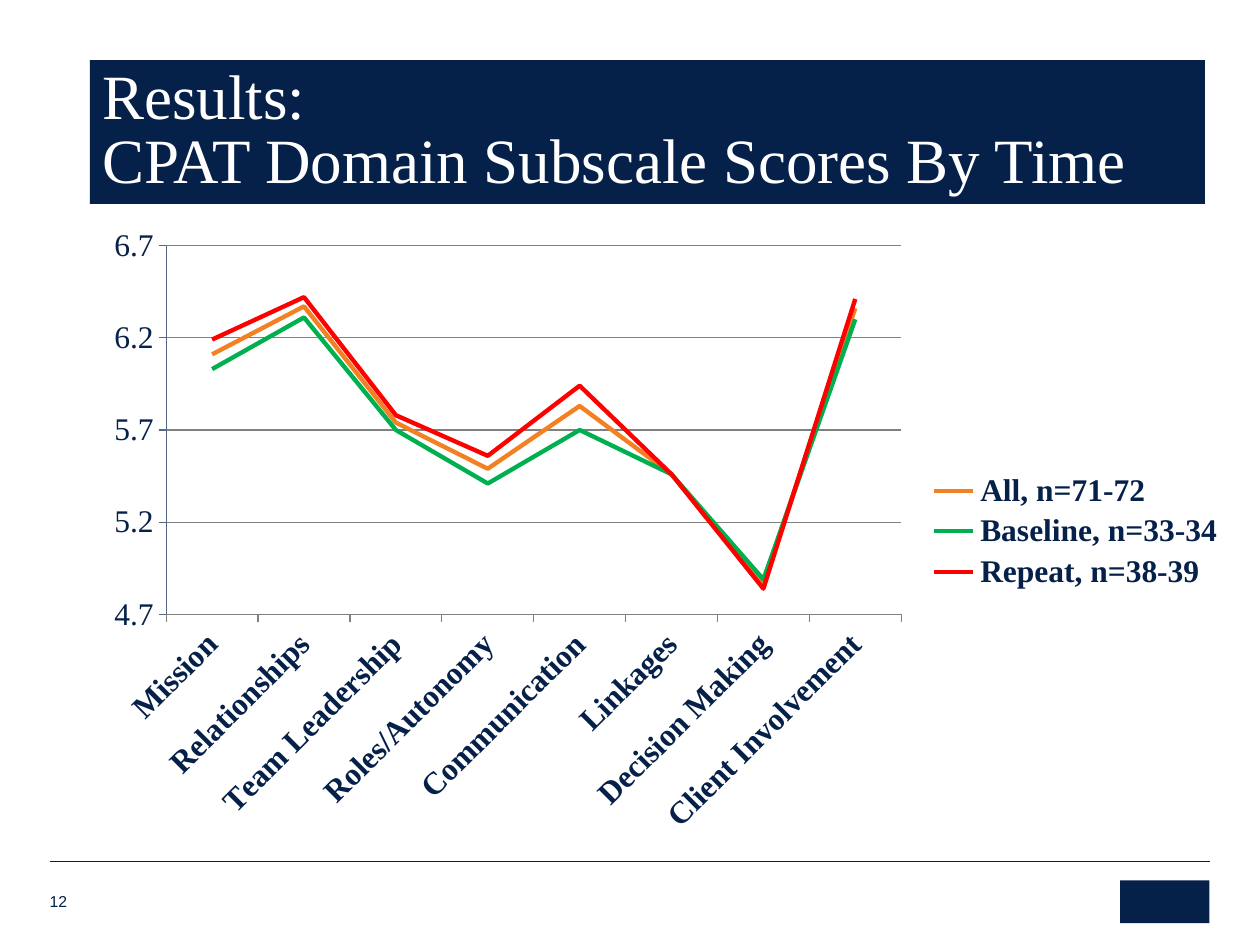
from lxml import etree
from pptx import Presentation
from pptx.chart.data import CategoryChartData
from pptx.dml.color import RGBColor
from pptx.enum.chart import XL_CHART_TYPE, XL_LEGEND_POSITION, XL_TICK_MARK
from pptx.enum.shapes import MSO_CONNECTOR, MSO_SHAPE
from pptx.enum.text import MSO_ANCHOR, MSO_AUTO_SIZE, PP_ALIGN
from pptx.oxml.ns import qn
from pptx.util import Cm, Pt

LINE_CHART = XL_CHART_TYPE.LINE
LEGEND_RIGHT = XL_LEGEND_POSITION.RIGHT
TICK_OUTSIDE = XL_TICK_MARK.OUTSIDE
STRAIGHT = MSO_CONNECTOR.STRAIGHT
RECTANGLE = MSO_SHAPE.RECTANGLE
MIDDLE, BOTTOM = MSO_ANCHOR.MIDDLE, MSO_ANCHOR.BOTTOM
NO_AUTOFIT = MSO_AUTO_SIZE.NONE
LEFT = PP_ALIGN.LEFT

NAVY, WHITE, GRID_GRAY, AXIS_BLUE = "052049", "FFFFFF", "808080", "556784"
SERIF, SANS = "Times New Roman", "Arial"
TITLE_ONLY_LAYOUT = 5
CHART_WIDTH, CHART_HEIGHT = 23.11, 12.7

TITLE_LINES = ["Results:", "CPAT Domain Subscale Scores By Time"]
DOMAINS = ["Mission", "Relationships", "Team Leadership", "Roles/Autonomy",
           "Communication", "Linkages", "Decision Making", "Client Involvement"]
SCORES = [
    ("All, n=71-72", "F48024", [6.11, 6.37, 5.74, 5.49, 5.83, 5.46, 4.87, 6.36]),
    ("Baseline, n=33-34", "00B050", [6.03, 6.31, 5.7, 5.41, 5.7, 5.46, 4.89, 6.3]),
    ("Repeat, n=38-39", "FF0000", [6.19, 6.42, 5.78, 5.56, 5.94, 5.46, 4.84, 6.41]),
]


def rgb(color):
    return RGBColor.from_string(color)


def style_font(font, name, size, color, bold=False):
    font.name, font.size, font.bold = name, Pt(size), bold
    font.color.rgb = rgb(color)


def style_line(line, color, width):
    line.color.rgb = rgb(color)
    line.width = Pt(width)


def fill_solid(shape, color):
    shape.fill.solid()
    shape.fill.fore_color.rgb = rgb(color)


def place(shape, left, top, width, height):
    shape.left, shape.top = Cm(left), Cm(top)
    shape.width, shape.height = Cm(width), Cm(height)


def add_title(slide):
    title = slide.shapes.title
    place(title, 1.81, 1.21, 22.48, 2.9)
    fill_solid(title, NAVY)
    frame = title.text_frame
    frame.auto_size, frame.vertical_anchor = NO_AUTOFIT, MIDDLE
    paragraph = frame.paragraphs[0]
    paragraph.alignment, paragraph.line_spacing = LEFT, 0.85
    for number, wording in enumerate(TITLE_LINES):
        if number:
            paragraph.add_line_break()
        run = paragraph.add_run()
        run.text = wording
        style_font(run.font, SERIF, 36, WHITE)


def set_layout(part, index, left, top, width, height, inner=False):
    """Fix a chart part's place, in centimetres from the chart's corner."""
    for old in part.findall(qn("c:layout")):
        part.remove(old)
    layout = etree.Element(qn("c:layout"))
    manual = etree.SubElement(layout, qn("c:manualLayout"))
    settings = [("layoutTarget", "inner")] if inner else []
    settings += [("xMode", "edge"), ("yMode", "edge"),
                 ("x", left / CHART_WIDTH), ("y", top / CHART_HEIGHT),
                 ("w", width / CHART_WIDTH), ("h", height / CHART_HEIGHT)]
    for tag, value in settings:
        etree.SubElement(manual, qn(f"c:{tag}")).set("val", str(value))
    part.insert(index, layout)


def style_axes(chart):
    domains, scores = chart.category_axis, chart.value_axis
    for axis, color, bold in ((domains, GRID_GRAY, True), (scores, AXIS_BLUE, False)):
        axis.major_tick_mark = TICK_OUTSIDE
        style_font(axis.tick_labels.font, SERIF, 18, NAVY, bold)
        style_line(axis.format.line, color, 0.75)
    label_body = domains._element.find(qn("c:txPr")).find(qn("a:bodyPr"))
    label_body.set("rot", str(-45 * 60000))
    label_body.set("vert", "horz")
    scores.minimum_scale, scores.maximum_scale = 4.7, 6.7
    scores.major_unit = 0.5
    scores.has_major_gridlines = True
    style_line(scores.major_gridlines.format.line, GRID_GRAY, 0.75)


def add_score_chart(slide):
    data = CategoryChartData()
    data.categories = DOMAINS
    for name, _, values in SCORES:
        data.add_series(name, values)
    chart = slide.shapes.add_chart(
        LINE_CHART, Cm(1.83), Cm(4.34), Cm(CHART_WIDTH), Cm(CHART_HEIGHT), data).chart
    chart.has_title = False
    style_font(chart.font, SERIF, 18, NAVY)
    plot = chart.plots[0]
    plot.vary_by_categories = False
    for series, (_, color, _) in zip(plot.series, SCORES):
        series.smooth = False
        style_line(series.format.line, color, 2.5)
    style_axes(chart)
    chart.has_legend = True
    legend = chart.legend
    legend.position, legend.include_in_layout = LEGEND_RIGHT, False
    style_font(legend.font, SERIF, 18, NAVY, bold=True)
    plot_area = chart._chartSpace.find(f".//{qn('c:plotArea')}")
    set_layout(plot_area, 0, 1.52, 0.61, 14.82, 7.44, inner=True)
    set_layout(legend._element, 1, 16.73, 5.08, 6.24, 2.58)


def add_footer(slide):
    rule = slide.shapes.add_connector(
        STRAIGHT, Cm(1), Cm(17.37), Cm(24.4), Cm(17.37))
    style_line(rule.line, NAVY, 0.25)
    etree.SubElement(rule._element.spPr, qn("a:effectLst"))

    emblem = slide.shapes.add_shape(
        RECTANGLE, Cm(22.58), Cm(17.75), Cm(1.8), Cm(0.86))
    emblem.shadow.inherit = False
    fill_solid(emblem, NAVY)
    emblem.line.fill.background()

    page = slide.shapes.add_textbox(Cm(1), Cm(17.93), Cm(0.7), Cm(0.43))
    frame = page.text_frame
    frame.word_wrap, frame.vertical_anchor = True, BOTTOM
    frame.margin_left = frame.margin_right = 0
    frame.margin_top = frame.margin_bottom = 0
    run = frame.paragraphs[0].add_run()
    run.text = "12"
    style_font(run.font, SANS, 9, NAVY)


def main():
    deck = Presentation()
    deck.slide_width, deck.slide_height = Cm(25.4), Cm(19.05)
    slide = deck.slides.add_slide(deck.slide_layouts[TITLE_ONLY_LAYOUT])
    add_title(slide)
    add_score_chart(slide)
    add_footer(slide)
    deck.save("out.pptx")


if __name__ == "__main__":
    main()
